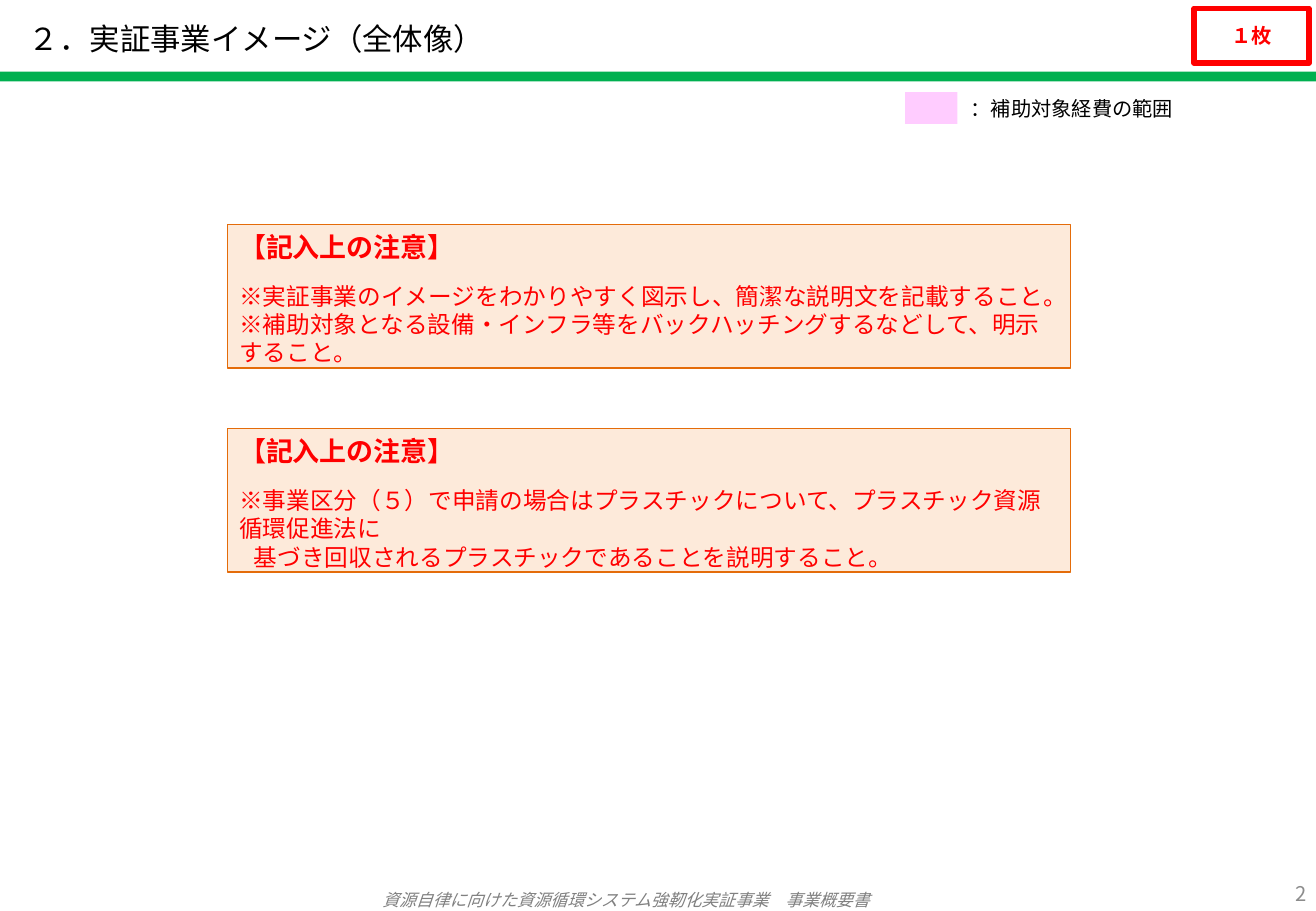
from lxml.etree import SubElement
from pptx import Presentation
from pptx.dml.color import RGBColor
from pptx.enum.shapes import MSO_SHAPE as SHAPE
from pptx.enum.text import MSO_ANCHOR as ANCHOR, PP_ALIGN as ALIGN
from pptx.oxml.ns import qn
from pptx.util import Inches, Pt

FONT = "Noto Sans CJK JP"
COLORS = {
    "black": "000000", "white": "FFFFFF", "red": "FF0000", "green": "00B050",
    "pink": "FFCCFF", "peach": "FDEADA", "orange": "E46C0A",
    "footer": "808080", "number": "8C8C8C",
}

prs = Presentation()
prs.slide_width, prs.slide_height = Inches(10.83), Inches(7.5)
s = prs.slides.add_slide(prs.slide_layouts[6])


def add_box(box, fill, line=None, width=0):
    sp = s.shapes.add_shape(SHAPE.RECTANGLE, *map(Inches, box))
    sp.shadow.inherit = False
    sp.fill.solid()
    sp.fill.fore_color.rgb = RGBColor.from_string(COLORS[fill])
    if line:
        sp.line.color.rgb = RGBColor.from_string(COLORS[line])
        sp.line.width = Pt(width)
    else:
        sp.line.fill.background()
    return sp


def write(p, text, size, color, align=ALIGN.LEFT, bold=False, italic=False):
    p.text = text
    p.alignment = align
    p.font.size, p.font.bold, p.font.italic = Pt(size), bold, italic
    p.font.color.rgb = RGBColor.from_string(COLORS[color])
    p.font.name = FONT
    props = p._p.pPr.find(qn("a:defRPr"))
    SubElement(props, qn("a:ea")).set("typeface", FONT)


add_box((-0.01, 0.59, 10.84, 0.08), "green")
add_box((7.45, 0.76, 0.43, 0.26), "pink")

labels = [
    ((0, 7.32, 10.3, 0.18), "資源自律に向けた資源循環システム強靭化実証事業　事業概要書",
     10, "footer", ALIGN.CENTER, ANCHOR.MIDDLE, True),
    ((0.14, 0.11, 4.88, 0.41), "２．実証事業イメージ（全体像）",
     18, "black", ALIGN.LEFT, ANCHOR.MIDDLE, True),
    ((7.89, 0.74, 1.88, 0.3), "：補助対象経費の範囲",
     12, "black", ALIGN.LEFT, ANCHOR.TOP, False),
    ((9.71, 7.21, 1.14, 0.28), "2",
     12, "number", ALIGN.RIGHT, ANCHOR.TOP, True),
]
for box, text, size, color, align, anchor, wrap in labels:
    tf = s.shapes.add_textbox(*map(Inches, box)).text_frame
    tf.word_wrap = wrap
    tf.vertical_anchor = anchor
    if anchor == ANCHOR.MIDDLE:
        tf.margin_top = tf.margin_bottom = 0
    write(tf.paragraphs[0], text, size, color, align, italic=color == "footer")

tf = add_box((9.83, 0.07, 0.94, 0.45), "white", "red", 3.5).text_frame
tf.vertical_anchor = ANCHOR.MIDDLE
write(tf.paragraphs[0], "１枚", 12, "red", ALIGN.CENTER, bold=True)

notes = [
    (1.85, 0, ["※実証事業のイメージをわかりやすく図示し、簡潔な説明文を記載すること。",
               "※補助対象となる設備・インフラ等をバックハッチングするなどして、明示すること。"]),
    (3.53, 0.12, ["※事業区分（５）で申請の場合はプラスチックについて、プラスチック資源循環促進法に",
                  "基づき回収されるプラスチックであることを説明すること。"]),
]
for top, indent, lines in notes:
    tf = add_box((1.87, top, 6.94, 1.18), "peach", "orange", 0.75).text_frame
    tf.word_wrap = True
    tf.vertical_anchor = ANCHOR.TOP
    write(tf.paragraphs[0], "【記入上の注意】", 16, "red", bold=True)
    for line in lines:
        p = tf.add_paragraph()
        write(p, line, 14, "red")
    tf.paragraphs[1].space_before = Pt(11)
    p._p.pPr.set("marL", str(Inches(indent)))

prs.save("out.pptx")
